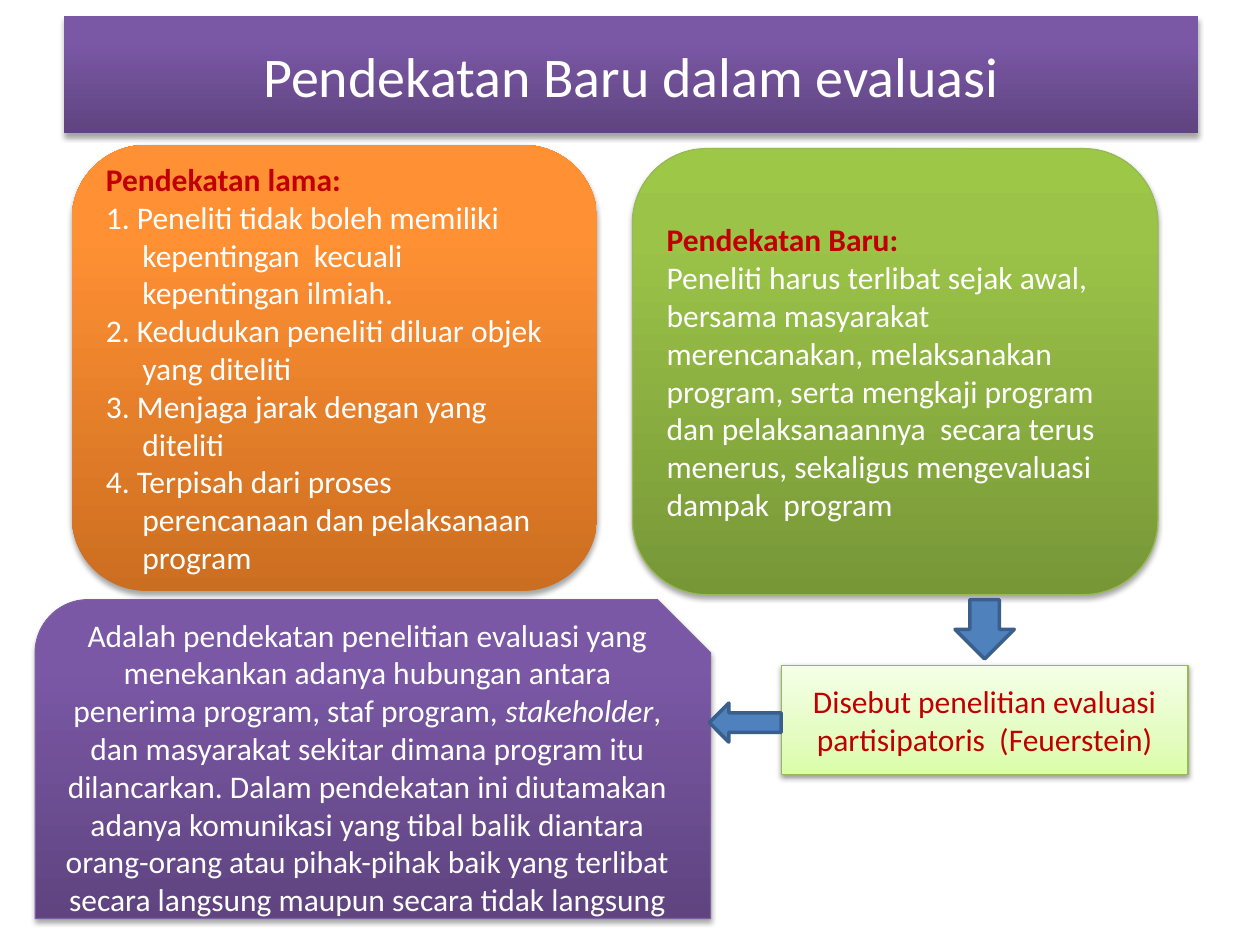
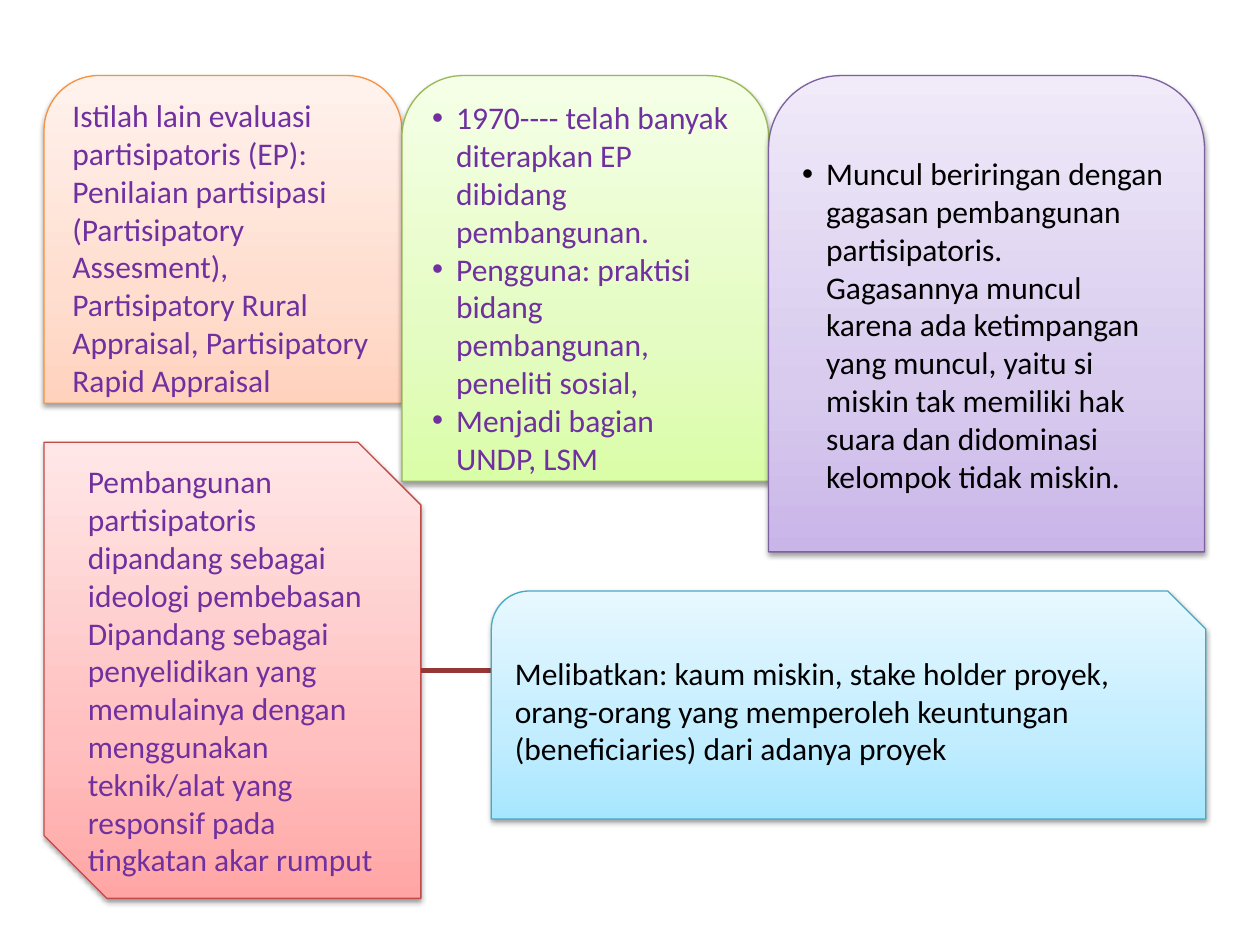
from collections import namedtuple

from lxml.etree import SubElement as Sub
from pptx import Presentation
from pptx.dml.color import RGBColor as Rgb
from pptx.enum.shapes import MSO_CONNECTOR as Link, MSO_SHAPE as Kind
from pptx.enum.text import MSO_ANCHOR as Anchor, PP_ALIGN as Align
from pptx.oxml.ns import qn
from pptx.util import Inches, Pt

COLS, ROWS, UNIT = 100, 75, 0.1
FONT = "Calibri"
WHITE = Rgb(0xFF, 0xFF, 0xFF)
BLACK = Rgb(0x00, 0x00, 0x00)
RED = Rgb(0xC0, 0x00, 0x00)
VIOLET = Rgb(0x70, 0x30, 0xA0)
BLUE = Rgb(0x4F, 0x81, 0xBD)
NAVY = Rgb(0x3A, 0x5F, 0x8C)
BRICK = Rgb(0x95, 0x37, 0x35)
GREEN = Rgb(0x98, 0xB9, 0x55)
PLUM = Rgb(0x7D, 0x60, 0xA0)
AMBER = Rgb(0xF6, 0x92, 0x40)
ROSE = Rgb(0xBF, 0x4C, 0x48)
AQUA = Rgb(0x46, 0xAA, 0xC5)

Look = namedtuple("Look", "tones mid edge alpha drop")
Par = namedtuple("Par", "runs left hang dot", defaults=(0, 0, False))


def tones(*codes):
    """Turn hex codes into colours."""
    return [Rgb.from_string(code) for code in codes]


def deep(edge, *codes):
    """Give a dark gradient look."""
    return Look(tones(*codes), 80, edge, 35, 1.8)


def pale(edge, *codes):
    """Give a light gradient look."""
    return Look(tones(*codes), 35, edge, 38, 1.6)


BAND = deep(None, "5F4480", "7B58A6", "7C57A8")
GRAPE = deep(PLUM, "5F4480", "7B58A6", "7C57A8")
FLAME = deep(None, "CC6E20", "FF9034", "FF9136")
LEAF = deep(GREEN, "779737", "9BC348", "9DC746")
LIME = pale(GREEN, "DAFDA7", "E4FCC2", "F5FFE7")
PEACH = pale(AMBER, "FFD2BD", "FFDED0", "FFF2ED")
LILAC = pale(PLUM, "C9B5E8", "D8CBEE", "F0EAF9")
PINK = pale(ROSE, "FFA6A5", "FFC0BF", "FFE7E7")
SKY = pale(AQUA, "A7E6FF", "C1EDFF", "E7F8FF")


class Box(namedtuple("Box", "x y w h")):
    """A region measured in grid columns and rows."""

    def area(self, x, y, w, h):
        """Give a box placed relative to this one."""
        return Box(self.x + x, self.y + y, w, h)

    def size(self):
        """Give left, top, width and height as lengths."""
        return [Inches(round(n * UNIT, 2)) for n in self]


PAGE = Box(0, 0, COLS, ROWS)


def put(item, values):
    """Set attributes from a dict."""
    for name, value in values.items():
        setattr(item, name, value)


def tint(node, tone, **mods):
    """Add an RGB colour with modifiers to a node."""
    rgb = Sub(node, qn("a:srgbClr"), val=str(tone))
    for name, value in mods.items():
        Sub(rgb, qn(f"a:{name}"), val=str(value))


def paint(shape, look):
    """Apply gradient, edge and soft shadow."""
    shape.fill.gradient()
    shape.fill.gradient_angle = 90
    props = shape._element.spPr
    stops = props.find(qn("a:gradFill")).find(qn("a:gsLst"))
    for stop in list(stops):
        stops.remove(stop)
    for spot, tone in zip((0, look.mid, 100), look.tones):
        tint(Sub(stops, qn("a:gs"), pos=str(spot * 1000)), tone)
    if look.edge is None:
        shape.line.fill.background()
    else:
        shape.line.color.rgb = look.edge
        shape.line.width = Pt(0.75)
    shape.shadow.inherit = False
    shade = Sub(props.find(qn("a:effectLst")), qn("a:outerShdw"),
                blurRad=str(Pt(3.1)), dist=str(Pt(look.drop)),
                dir="5400000", rotWithShape="0")
    tint(shade, BLACK, alpha=look.alpha * 1000)


def write(frame, pars, ink, size=18, align=Align.LEFT):
    """Fill a text frame with paragraphs."""
    put(frame, {"word_wrap": True, "vertical_anchor": Anchor.MIDDLE})
    for i, item in enumerate(pars):
        item = Par(item) if isinstance(item, str) else item
        par = frame.add_paragraph() if i else frame.paragraphs[0]
        par.alignment = align
        props = par._p.get_or_add_pPr()
        if item.left:
            props.set("marL", str(Inches(item.left)))
            props.set("indent", str(-Inches(item.hang)))
        if item.dot:
            Sub(props, qn("a:buFont"), typeface="Arial")
            Sub(props, qn("a:buChar"), char="•")
        runs = [(item.runs, {})] if isinstance(item.runs, str) else item.runs
        for text, style in runs:
            run = par.add_run()
            run.text = text
            tone = style.get("ink", ink)
            look = {k: v for k, v in style.items() if k != "ink"}
            put(run.font, {"name": FONT, "size": Pt(size), **look})
            run.font.color.rgb = tone


def title(slide, box, text):
    """Place the title band."""
    shape = slide.shapes.title
    put(shape, dict(zip(("left", "top", "width", "height"), box.size())))
    paint(shape, BAND)
    write(shape.text_frame, [text], WHITE, 32, Align.CENTER)


def panel(slide, kind, box, look, ink, pars, align=Align.LEFT):
    """Place a gradient panel with text."""
    shape = slide.shapes.add_shape(kind, *box.size())
    paint(shape, look)
    write(shape.text_frame, pars, ink, align=align)


def arrow(slide, kind, box):
    """Place a block arrow."""
    shape = slide.shapes.add_shape(kind, *box.size())
    shape.shadow.inherit = False
    shape.fill.solid()
    shape.fill.fore_color.rgb = BLUE
    shape.line.color.rgb = NAVY
    shape.line.width = Pt(2)


def link(slide, box):
    """Draw a thick joining line."""
    x, y, w, h = box.size()
    line = slide.shapes.add_connector(Link.STRAIGHT, x, y, x + w, y + h)
    line.line.color.rgb = BRICK
    line.line.width = Pt(3)
    Sub(line._element.spPr, qn("a:effectLst"))


def head(text):
    """Give a bold red heading."""
    return Par([(text, {"bold": True, "ink": RED})])


def dot(text):
    """Give a bulleted paragraph."""
    return Par(text, 0.19, 0.19, True)


def compare(slide, box):
    """Set the old and new approaches side by side."""
    old = ["Peneliti tidak boleh memiliki kepentingan  kecuali kepentingan ilmiah.",
           "Kedudukan peneliti diluar objek yang diteliti",
           "Menjaga jarak dengan yang diteliti",
           "Terpisah dari proses perencanaan dan pelaksanaan program"]
    steps = [Par(f"{n}. {text}", 0.29, 0.29) for n, text in enumerate(old, 1)]
    new = ("Peneliti harus terlibat sejak awal, bersama masyarakat merencanakan, "
           "melaksanakan  program, serta mengkaji program dan pelaksanaannya  "
           "secara terus menerus, sekaligus mengevaluasi dampak  program")
    sides = [(0, 0, FLAME, [head("Pendekatan lama:"), *steps]),
             (44.5, 0.3, LEAF, [head("Pendekatan Baru:"), new])]
    for x, y, look, pars in sides:
        spot = box.area(x, y, 41.7, 35.4)
        panel(slide, Kind.ROUNDED_RECTANGLE, spot, look, WHITE, pars)


def result(slide, box):
    """Lead from the new approach to its name and meaning."""
    text = Par([
        ("Adalah pendekatan penelitian evaluasi yang menekankan adanya hubungan "
         "antara penerima program, staf program, ", {}),
        ("stakeholder", {"italic": True}),
        (", dan masyarakat sekitar dimana program itu dilancarkan. Dalam "
         "pendekatan ini diutamakan adanya komunikasi yang tibal balik diantara "
         "orang-orang atau pihak-pihak baik yang terlibat secara langsung maupun "
         "secara tidak langsung", {})])
    panel(slide, Kind.RECTANGLE, box.area(59.2, 5.2, 32.3, 8.7), LIME, RED,
          ["Disebut penelitian evaluasi partisipatoris  (Feuerstein)"],
          Align.CENTER)
    arrow(slide, Kind.DOWN_ARROW, box.area(73, 0, 4.7, 4.7))
    panel(slide, Kind.SNIP_ROUND_RECTANGLE, box.area(0, 0, 53.6, 25.3),
          GRAPE, WHITE, [text], Align.CENTER)
    arrow(slide, Kind.LEFT_ARROW, box.area(53.5, 8.2, 5.7, 3.1))


def terms(slide, box):
    """Line up three panels of growing height."""
    cards = [
        (28.4, 26, PEACH, VIOLET, [
            "Istilah lain evaluasi partisipatoris (EP):",
            "Penilaian partisipasi (Partisipatory Assesment), Partisipatory "
            "Rural Appraisal, Partisipatory Rapid Appraisal"]),
        (29.1, 32.2, LIME, VIOLET, [
            dot("1970---- telah banyak diterapkan EP dibidang pembangunan."),
            dot("Pengguna: praktisi bidang pembangunan, peneliti sosial,"),
            dot("Menjadi bagian  UNDP, LSM")]),
        (34.6, 37.8, LILAC, BLACK, [
            dot("Muncul beriringan dengan gagasan pembangunan partisipatoris."),
            Par("Gagasannya muncul karena ada ketimpangan yang muncul, yaitu si "
                "miskin tak memiliki hak suara dan didominasi kelompok tidak "
                "miskin.", 0.19)])]
    x = 0
    for w, h, look, ink, pars in cards:
        spot = box.area(x, 0, w, h)
        panel(slide, Kind.ROUND_2_SAME_RECTANGLE, spot, look, ink, pars)
        x += w


def views(slide, box):
    """Join the ideology panel to the people involved."""
    panel(slide, Kind.SNIP_2_DIAG_RECTANGLE, box.area(0, 0, 29.9, 36.2),
          PINK, VIOLET, [
              "Pembangunan partisipatoris dipandang sebagai ideologi pembebasan",
              "Dipandang sebagai penyelidikan yang memulainya dengan menggunakan "
              "teknik/alat yang responsif pada tingkatan akar rumput"])
    link(slide, box.area(29.9, 18.1, 5.6, 0))
    panel(slide, Kind.SNIP_ROUND_RECTANGLE, box.area(35.5, 11.8, 56.7, 18.1),
          SKY, BLACK, [
              "Melibatkan: kaum miskin, stake holder proyek, orang-orang yang "
              "memperoleh keuntungan  (beneficiaries) dari adanya proyek"])


def main():
    """Build both slides and save them."""
    deck = Presentation()
    put(deck, {"slide_width": Inches(COLS * UNIT),
               "slide_height": Inches(ROWS * UNIT)})
    first = deck.slides.add_slide(deck.slide_layouts[5])
    title(first, PAGE.area(5.1, 1.3, 90, 9.3), "Pendekatan Baru dalam evaluasi")
    compare(first, PAGE.area(5.7, 11.5, 86.2, 35.7))
    result(first, PAGE.area(2.8, 47.6, 91.5, 25.3))
    second = deck.slides.add_slide(deck.slide_layouts[6])
    terms(second, PAGE.area(3.5, 6, 92.1, 37.8))
    views(second, PAGE.area(3.5, 35.1, 92.2, 36.2))
    deck.save("out.pptx")


if __name__ == "__main__":
    main()
